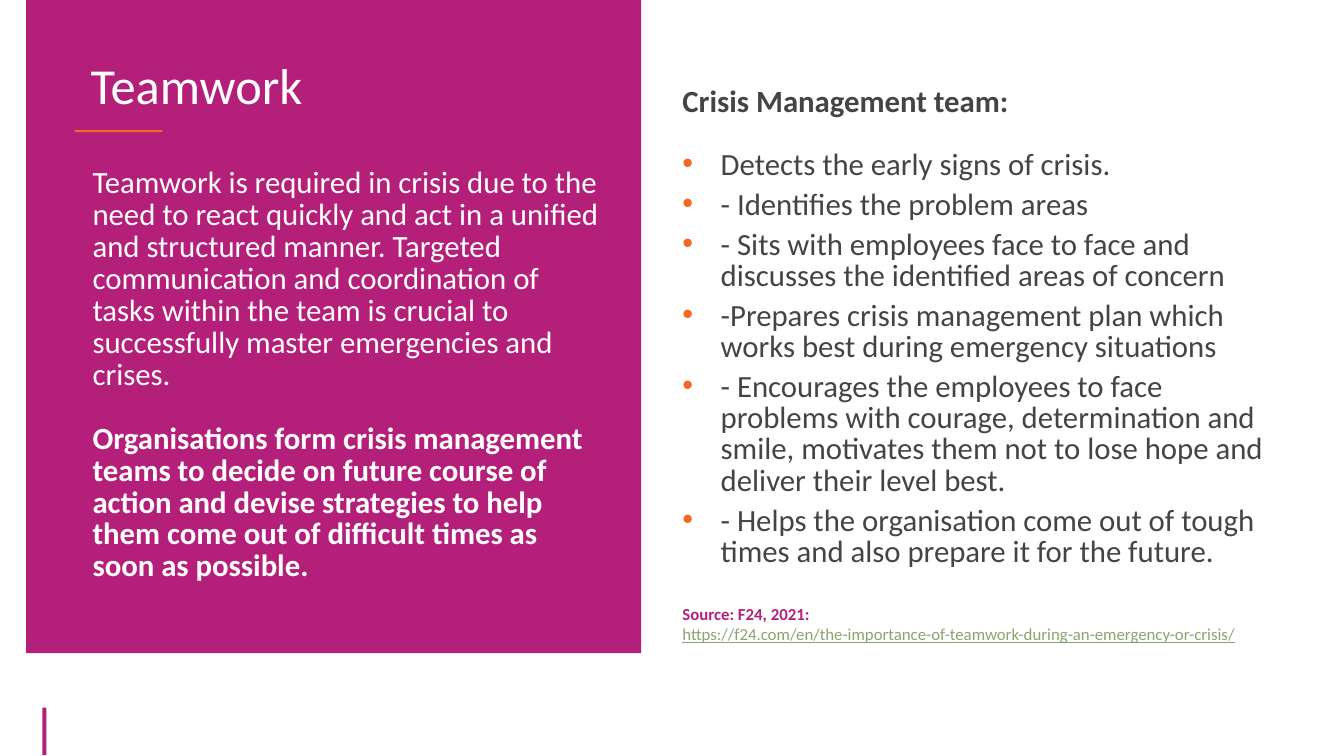
from dataclasses import dataclass

from lxml import etree
from pptx import Presentation
from pptx import util as u
from pptx.dml.color import RGBColor
from pptx.enum import shapes, text
from pptx.oxml.ns import qn


@dataclass(frozen=True)
class Theme:
    plum: str = "B41F7A"
    flame: str = "F16924"
    white: str = "FFFFFF"
    ink: str = "444444"
    green: str = "87A66E"
    face: str = "Calibri"
    title: int = 36
    body: int = 22
    small: int = 12


T = Theme()


@dataclass(frozen=True)
class Bar:
    area: tuple[float, float, float, float]
    color: str


@dataclass(frozen=True)
class Para:
    words: str
    color: str
    size: int = T.body
    bold: bool = False
    line: bool = False
    bullet: bool = False
    indent: float = 0
    format: tuple[tuple[str, object], ...] = ()


@dataclass(frozen=True)
class Block:
    area: tuple[float, float, float, float]
    paras: list[Para]
    anchor: text.MSO_ANCHOR = text.MSO_ANCHOR.TOP


def put(item: object, values: dict[str, object]) -> None:
    for name, value in values.items():
        setattr(item, name, value)


def draw_bar(slide, bar: Bar) -> None:
    box = slide.shapes.add_shape(
        shapes.MSO_SHAPE.RECTANGLE, *map(u.Inches, bar.area))
    box.shadow.inherit = False
    box.fill.solid()
    box.fill.fore_color.rgb = RGBColor.from_string(bar.color)
    box.line.fill.background()


def set_indent(para, item: Para) -> None:
    """Set the margin, and hang a bullet in it when there is one."""
    props = para._p.get_or_add_pPr()
    props.set("marL", str(u.Inches(item.indent)))
    if item.bullet:
        props.set("indent", str(-u.Inches(item.indent)))
        tint = etree.SubElement(props, qn("a:buClr"))
        etree.SubElement(tint, qn("a:srgbClr"), val=T.flame)
        etree.SubElement(props, qn("a:buFont"), typeface="Arial")
        etree.SubElement(props, qn("a:buChar"), char="•")


def draw_block(slide, block: Block) -> None:
    frame = slide.shapes.add_textbox(*map(u.Inches, block.area)).text_frame
    put(frame, {"word_wrap": True, "vertical_anchor": block.anchor})
    for i, item in enumerate(block.paras):
        para = frame.add_paragraph() if i else frame.paragraphs[0]
        set_indent(para, item)
        put(para, dict(item.format))
        run = para.add_run()
        run.text = item.words
        put(run.font, {"name": T.face, "size": u.Pt(item.size),
                       "bold": item.bold, "underline": item.line})
        run.font.color.rgb = RGBColor.from_string(item.color)


LEFT = (("line_spacing", u.Pt(22.8)),)
RIGHT = (("line_spacing", u.Pt(22.4)),)
DUTIES = [
    "Detects the early signs of crisis.",
    "- Identifies the problem areas",
    "- Sits with employees face to face and discusses the identified areas "
    "of concern",
    "-Prepares crisis management plan which works best during emergency "
    "situations",
    "- Encourages the employees to face problems with courage, determination "
    "and smile, motivates them not to lose hope and deliver their level best.",
    "- Helps the organisation come out of tough times and also prepare it "
    "for the future.",
]
BARS = [
    Bar((0.26, 0, 6.1, 6.48), T.plum),
    Bar((0.42, 7.02, 0.04, 0.47), T.plum),
    Bar((0.74, 1.29, 0.87, 0.02), T.flame),
]
BLOCKS = [
    Block((0.8, 0.57, 5.56, 0.64),
          [Para("Teamwork", T.white, T.title,
                format=(("line_spacing", 0.8),))],
          text.MSO_ANCHOR.MIDDLE),
    Block((0.8, 1.62, 5.27, 4.93), [
        Para("Teamwork is required in crisis due to the need to react quickly "
             "and act in a unified and structured manner. Targeted "
             "communication and coordination of tasks within the team is "
             "crucial to successfully master emergencies and crises.",
             T.white, indent=0.02,
             format=LEFT + (("space_after", u.Pt(22.8)),)),
        Para("Organisations form crisis management teams to decide on future "
             "course of action and devise strategies to help them come out of "
             "difficult times as soon as possible.",
             T.white, bold=True, indent=0.02, format=LEFT),
    ]),
    Block((6.67, 0.82, 6.12, 5.1), [
        Para("Crisis Management team:", T.ink, bold=True,
             format=RIGHT + (("space_after", u.Pt(22.4)),)),
        *(Para(duty, T.ink, bullet=True, indent=0.38,
               format=RIGHT + (("space_after", u.Pt(6)),))
          for duty in DUTIES),
    ]),
    Block((6.67, 5.94, 6.5, 0.5), [
        Para("Source: F24, 2021:", T.plum, T.small, bold=True),
        Para("https://f24.com/en/the-importance-of-teamwork-during-an-"
             "emergency-or-crisis/", T.green, T.small, line=True),
    ]),
]


def main() -> None:
    deck = Presentation()
    put(deck, {"slide_width": u.Inches(13.33), "slide_height": u.Inches(7.5)})
    slide = deck.slides.add_slide(deck.slide_layouts[6])
    for bar in BARS:
        draw_bar(slide, bar)
    for block in BLOCKS:
        draw_block(slide, block)
    deck.save("out.pptx")


if __name__ == "__main__":
    main()
